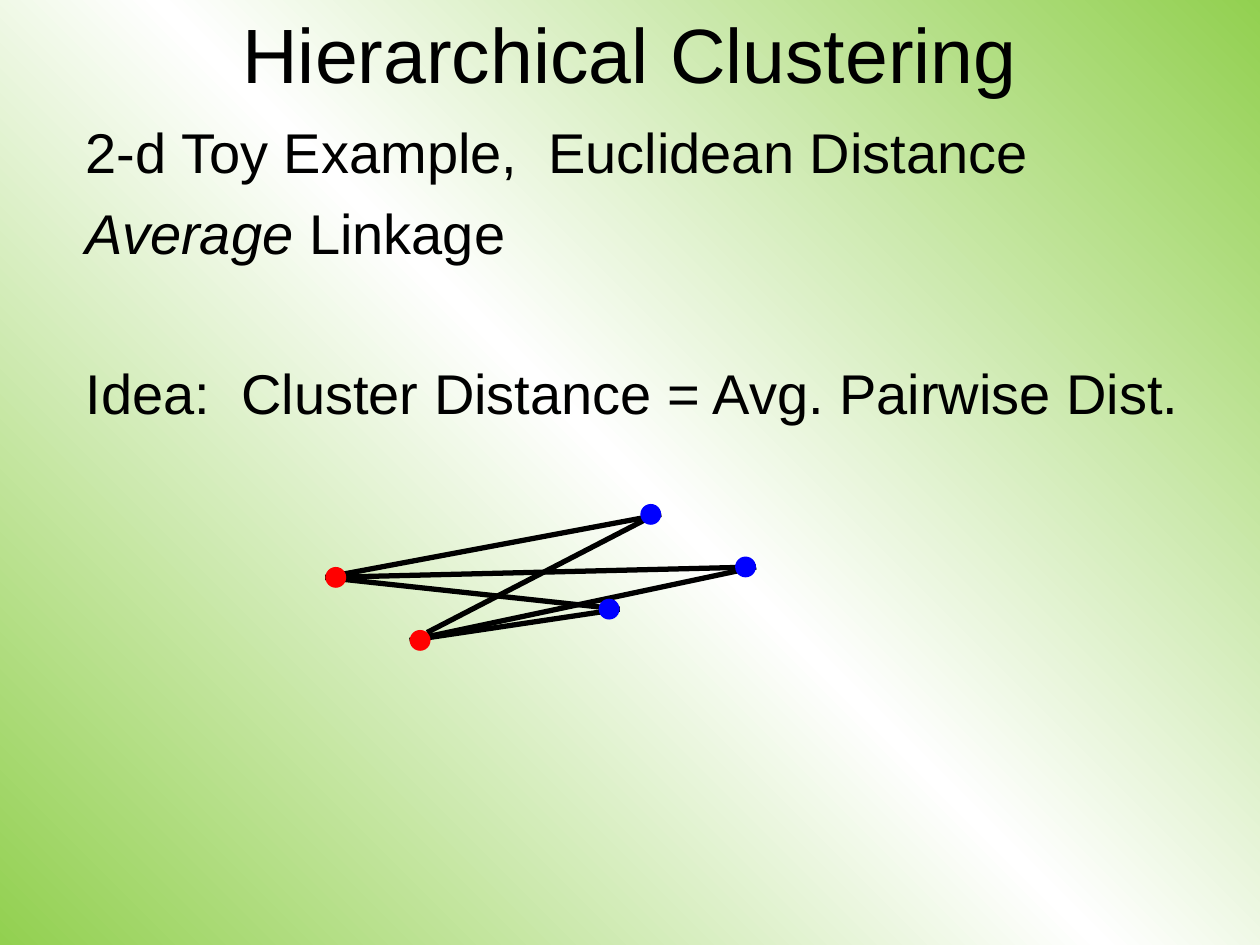
from copy import deepcopy
from itertools import product

from pptx import Presentation
from pptx.dml.color import RGBColor
from pptx.enum.shapes import MSO_CONNECTOR, MSO_SHAPE
from pptx.enum.text import MSO_ANCHOR, PP_ALIGN
from pptx.oxml.ns import qn
from pptx.oxml.xmlchemy import OxmlElement
from pptx.util import Cm, Pt

BLACK = RGBColor(0, 0, 0)
WHITE = RGBColor(255, 255, 255)
GREEN = RGBColor(0x92, 0xD0, 0x50)
RED = RGBColor(255, 0, 0)
BLUE = RGBColor(0, 0, 255)

DOT = 0.42
RED_DOTS = [(6.56, 11.43), (8.26, 12.7)]
BLUE_DOTS = [(12.91, 10.16), (12.07, 12.07), (14.82, 11.22)]


def add_text(left, top, width, height, size, paragraphs):
    """Add a text box; each paragraph is (space before, [(text, italic), ...])."""
    tf = slide.shapes.add_textbox(Cm(left), Cm(top), Cm(width), Cm(height)).text_frame
    tf.word_wrap = True
    for i, (space, runs) in enumerate(paragraphs):
        p = tf.add_paragraph() if i else tf.paragraphs[0]
        p.space_before = Pt(space)
        p.font.name = "Arial"
        p.font.size = Pt(size)
        p.font.color.rgb = BLACK
        for text, italic in runs:
            r = p.add_run()
            r.text = text
            if italic:
                r.font.italic = True
    return tf


def add_link(x1, y1, x2, y2):
    line = slide.shapes.add_connector(
        MSO_CONNECTOR.STRAIGHT, Cm(x1), Cm(y1), Cm(x2), Cm(y2))
    line.line.color.rgb = BLACK
    line.line.width = Pt(3)
    line.element.spPr.append(OxmlElement("a:effectLst"))


prs = Presentation()
prs.slide_width, prs.slide_height = Cm(25.4), Cm(19.05)
slide = prs.slides.add_slide(prs.slide_layouts[6])

# Diagonal green-white-green background
fill = slide.background.fill
fill.gradient()
fill.gradient_angle = 225  # counter-clockwise
first_stop = slide.element.find(".//" + qn("a:gs"))
first_stop.addnext(deepcopy(first_stop))
for stop, position, color in zip(fill.gradient_stops, (0, 0.5, 1), (GREEN, WHITE, GREEN)):
    stop.position = position
    stop.color.rgb = color

# Pairwise links, from the left edge of a red dot to the right edge of a blue one
for (rx, ry), (bx, by) in product(RED_DOTS, BLUE_DOTS):
    if (rx, ry) == RED_DOTS[1] and (bx, by) == BLUE_DOTS[0]:
        add_link(8.61, 12.75, 13.23, 10.36)  # the steep link starts at the dot's upper right
    else:
        add_link(rx, ry + DOT / 2, bx + DOT, by + DOT / 2)

title = add_text(1.9, 0.21, 21.6, 1.7, 44, [(0, [("Hierarchical Clustering", False)])])
title.vertical_anchor = MSO_ANCHOR.MIDDLE
title.paragraphs[0].alignment = PP_ALIGN.CENTER

add_text(1.48, 2.24, 23.5, 15.75, 32, [
    (0, [("2-d Toy Example,  Euclidean Distance", False)]),
    (8, [("Average", True), (" Linkage", False)]),
    (52.8, [("Idea:  Cluster Distance = Avg. Pairwise Dist.", False)]),
])

for color, dots in ((RED, RED_DOTS), (BLUE, BLUE_DOTS)):
    for x, y in dots:
        sp = slide.shapes.add_shape(MSO_SHAPE.OVAL, Cm(x), Cm(y), Cm(DOT), Cm(DOT))
        sp.shadow.inherit = False
        sp.fill.solid()
        sp.fill.fore_color.rgb = color
        sp.line.fill.background()

prs.save("out.pptx")
